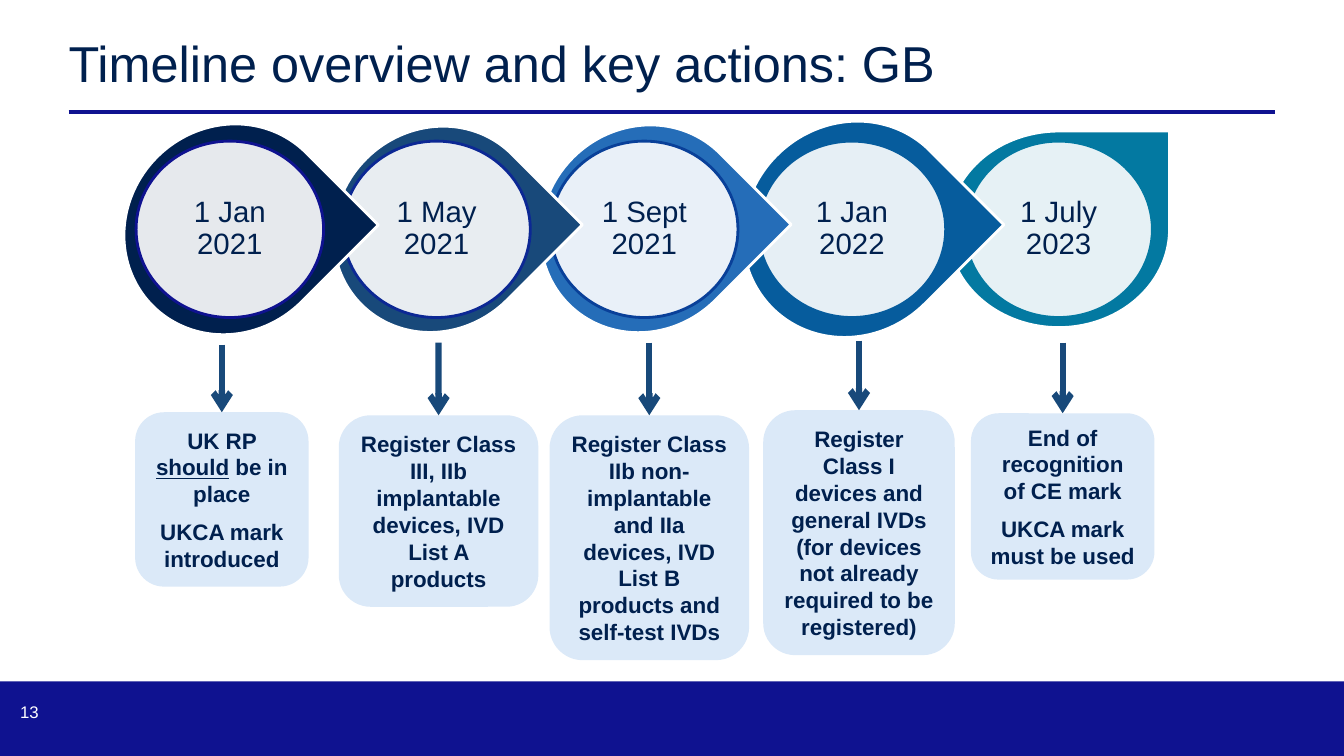
import pptx
import pptx.util
import pptx.dml.color
import pptx.enum.shapes
import pptx.enum.text
import pptx.oxml
import pptx.oxml.ns
import lxml.etree

Inches = pptx.util.Inches
Pt = pptx.util.Pt
SHAPE = pptx.enum.shapes.MSO_SHAPE
ALIGN = pptx.enum.text.PP_ALIGN
ANCHOR = pptx.enum.text.MSO_ANCHOR
AUTOSIZE = pptx.enum.text.MSO_AUTO_SIZE

COLORS = {
    "ink": "00204E",
    "brand": "0F1290",
    "steel": "18497A",
    "card": "DBE9F8",
    "white": "FFFFFF",
}


def rgb(color):
    return pptx.dml.color.RGBColor.from_string(COLORS.get(color, color))


def write(frame, *paragraphs, size, color="ink", bold=False, align=ALIGN.LEFT,
          anchor=ANCHOR.MIDDLE, insets=(0.1, 0.05, 0.1, 0.05), gap=0,
          line_spacing=None, underlined=None, autosize=AUTOSIZE.NONE):
    """Fill a text frame; the word given as underlined gets its own run."""
    frame.word_wrap = True
    frame.auto_size = autosize
    frame.vertical_anchor = anchor
    (frame.margin_left, frame.margin_top,
     frame.margin_right, frame.margin_bottom) = map(Inches, insets)
    for number, words in enumerate(paragraphs):
        paragraph = frame.add_paragraph() if number else frame.paragraphs[0]
        paragraph.alignment = align
        if number:
            paragraph.space_before = Pt(gap)
        if line_spacing:
            paragraph.line_spacing = line_spacing
        pieces = words.partition(underlined) if underlined else (words,)
        for piece in filter(None, pieces):
            run = paragraph.add_run()
            run.text = piece
            run.font.name = "Arial"
            run.font.size = Pt(size)
            run.font.bold = bold
            run.font.color.rgb = rgb(color)
            if piece == underlined:
                run.font.underline = True


class TimelineSlide:
    def __init__(self, deck):
        self.slide = deck.slides.add_slide(deck.slide_layouts[5])
        self.shapes = self.slide.shapes

    def title(self, words, left, top, width, height):
        heading = self.shapes.title
        heading.left, heading.top = Inches(left), Inches(top)
        heading.width, heading.height = Inches(width), Inches(height)
        write(heading.text_frame, words, size=36, anchor=ANCHOR.TOP,
              insets=(0, 0, 0, 0))

    def shape(self, kind, left, top, width, height, fill, line=None, alpha=None):
        shape = self.shapes.add_shape(
            kind, Inches(left), Inches(top), Inches(width), Inches(height))
        shape.shadow.inherit = False
        shape.fill.solid()
        shape.fill.fore_color.rgb = rgb(fill)
        if alpha:
            tint = shape.fill._xPr.find(".//" + pptx.oxml.ns.qn("a:srgbClr"))
            lxml.etree.SubElement(tint, pptx.oxml.ns.qn("a:alpha"),
                                  val=str(alpha * 1000))
        if line:
            shape.line.color.rgb = rgb(line)
            shape.line.width = Pt(2)
        else:
            shape.line.fill.background()
        return shape

    def label(self, words, left, top, width, height, **style):
        box = self.shapes.add_textbox(
            Inches(left), Inches(top), Inches(width), Inches(height))
        write(box.text_frame, words, **style)

    def line(self, start, end, color, weight, target=None):
        connector = self.shapes.add_connector(
            pptx.enum.shapes.MSO_CONNECTOR.STRAIGHT,
            *map(Inches, start), *map(Inches, end))
        connector.line.color.rgb = rgb(color)
        connector.line.width = Pt(weight)
        if target is not None:
            connector.end_connect(target, 0)
            lxml.etree.SubElement(connector.line._get_or_add_ln(),
                                  pptx.oxml.ns.qn("a:tailEnd"), type="arrow")
        lxml.etree.SubElement(connector._element.spPr,
                              pptx.oxml.ns.qn("a:effectLst"))

    def milestone(self, date, disc_left, drop, fill, ring, rotation):
        teardrop = self.shape(SHAPE.TEAR, *drop, fill, "white")
        teardrop.rotation = rotation
        self.shape(SHAPE.OVAL, disc_left, 1.4, 1.86, 1.75, "white", ring, alpha=90)
        self.label(date, disc_left + 0.46, 1.83, 0.94, 0.88, size=21,
                   align=ALIGN.CENTER, insets=(0.03,) * 4, line_spacing=0.9)

    def action(self, paragraphs, box, arrow_top, underlined=None):
        card = self.shape(SHAPE.ROUNDED_RECTANGLE, *box, "card")
        write(card.text_frame, *paragraphs, size=16, bold=True, gap=8,
              align=ALIGN.CENTER, underlined=underlined,
              autosize=AUTOSIZE.SHAPE_TO_FIT_TEXT)
        left, top, width, _ = box
        center = left + width / 2
        self.line((center, arrow_top), (center, top), "steel", 4.5, target=card)


# Date, disc left, teardrop frame, teardrop fill, disc ring, rotation
MILESTONES = [
    ("1 Jan 2021", 1.35, (1.26, 1.2, 2.03, 2.15), "ink", "brand", 45),
    ("1 May 2021", 3.4, (3.34, 1.22, 1.98, 2.11), "steel", "0C2894", 45),
    ("1 Sept 2021", 5.46, (5.39, 1.21, 2, 2.12), "256DB8", "094099", 45),
    ("1 Jan 2022", 7.52, (7.4, 1.17, 2.08, 2.21), "065C9D", "065C9D", 45),
    ("1 July 2023", 9.57, (9.4, 1.3, 2.2, 1.95), "0379A1", "0379A1", 0),
]

# Paragraphs, card frame, arrow top, underlined word
ACTIONS = [
    (["UK RP should be in place", "UKCA mark introduced"],
     (1.34, 4.09, 1.72, 1.73), 3.42, "should"),
    (["Register Class III, IIb implantable devices, IVD List A products"],
     (3.36, 4.12, 1.98, 1.9), 3.4, None),
    (["Register Class IIb non-implantable and IIa devices, IVD List B "
      "products and self-test IVDs"],
     (5.45, 4.12, 1.98, 2.43), 3.4, None),
    (["Register Class I devices and general IVDs (for devices not already "
      "required to be registered)"],
     (7.57, 4.07, 1.9, 2.43), 3.38, None),
    (["End of recognition of CE mark", "UKCA mark must be used"],
     (9.63, 4.1, 1.82, 1.65), 3.4, None),
]


def main():
    deck = pptx.Presentation()
    deck.slide_width, deck.slide_height = Inches(13.33), Inches(7.5)
    timeline = TimelineSlide(deck)

    # Footer band with page number
    timeline.shape(SHAPE.RECTANGLE, 0, 6.76, 13.33, 0.74, "brand")
    timeline.label("13", 0, 6.76, 0.79, 0.6, size=12, color="white",
                   insets=(0.2, 0, 0, 0))

    # Heading and rule
    timeline.title("Timeline overview and key actions: GB", 0.68, 0.32, 11.97, 0.62)
    timeline.line((0.68, 1.11), (12.65, 1.11), "brand", 3)

    # Dates, last one at the back so each point overlaps the next disc
    for milestone in reversed(MILESTONES):
        timeline.milestone(*milestone)

    # Key actions under the dates
    for action in ACTIONS:
        timeline.action(*action)

    deck.save("out.pptx")


if __name__ == "__main__":
    main()
